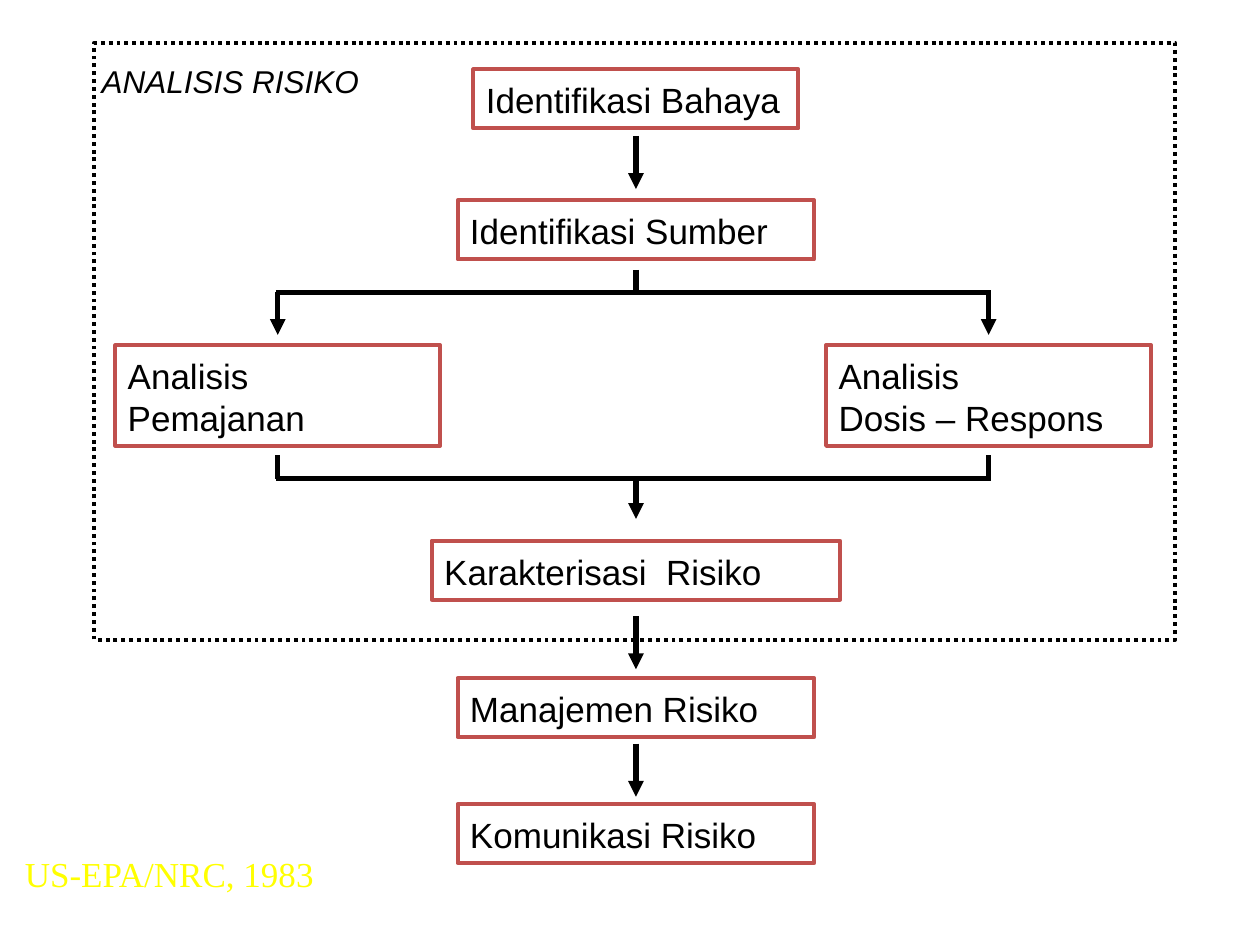
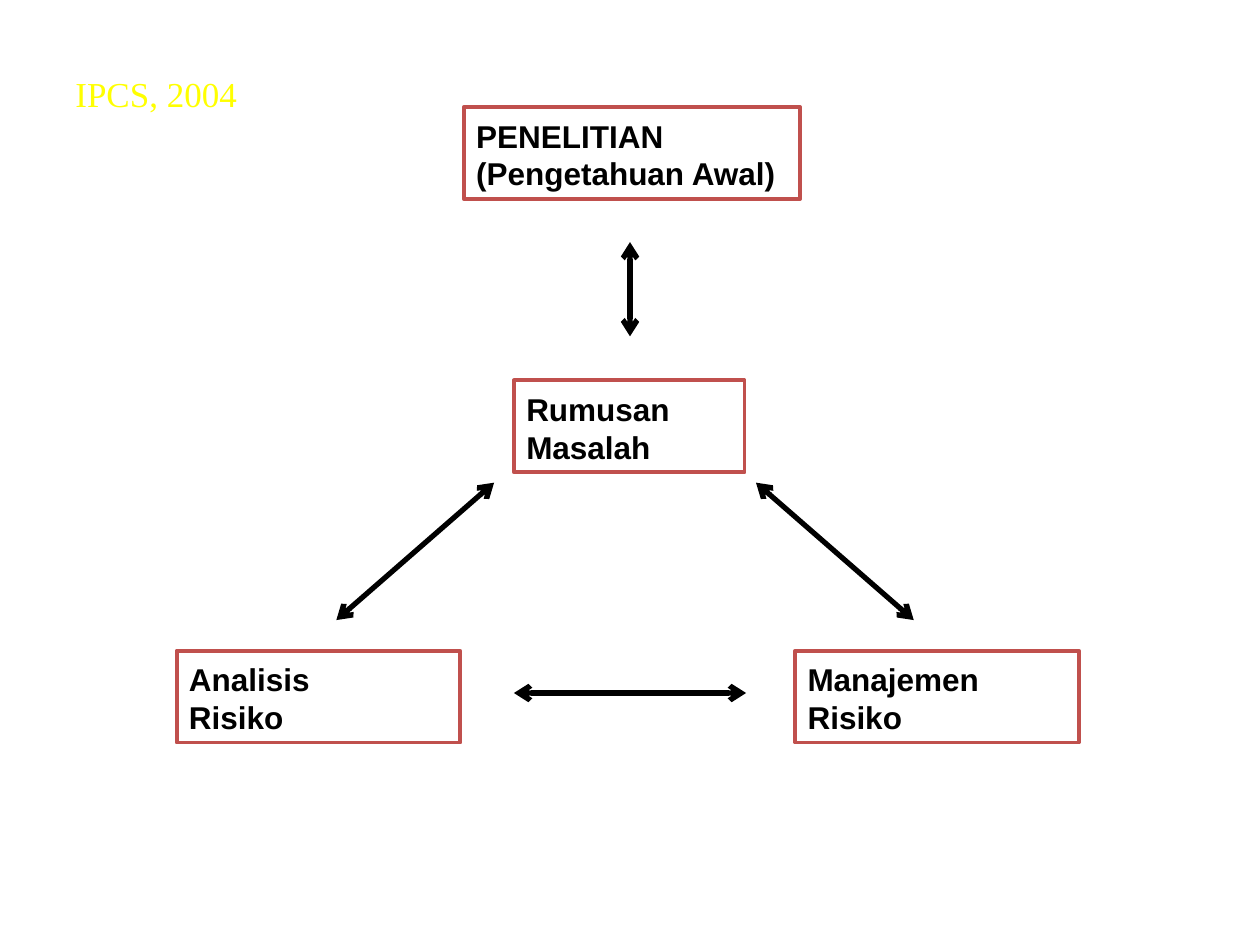
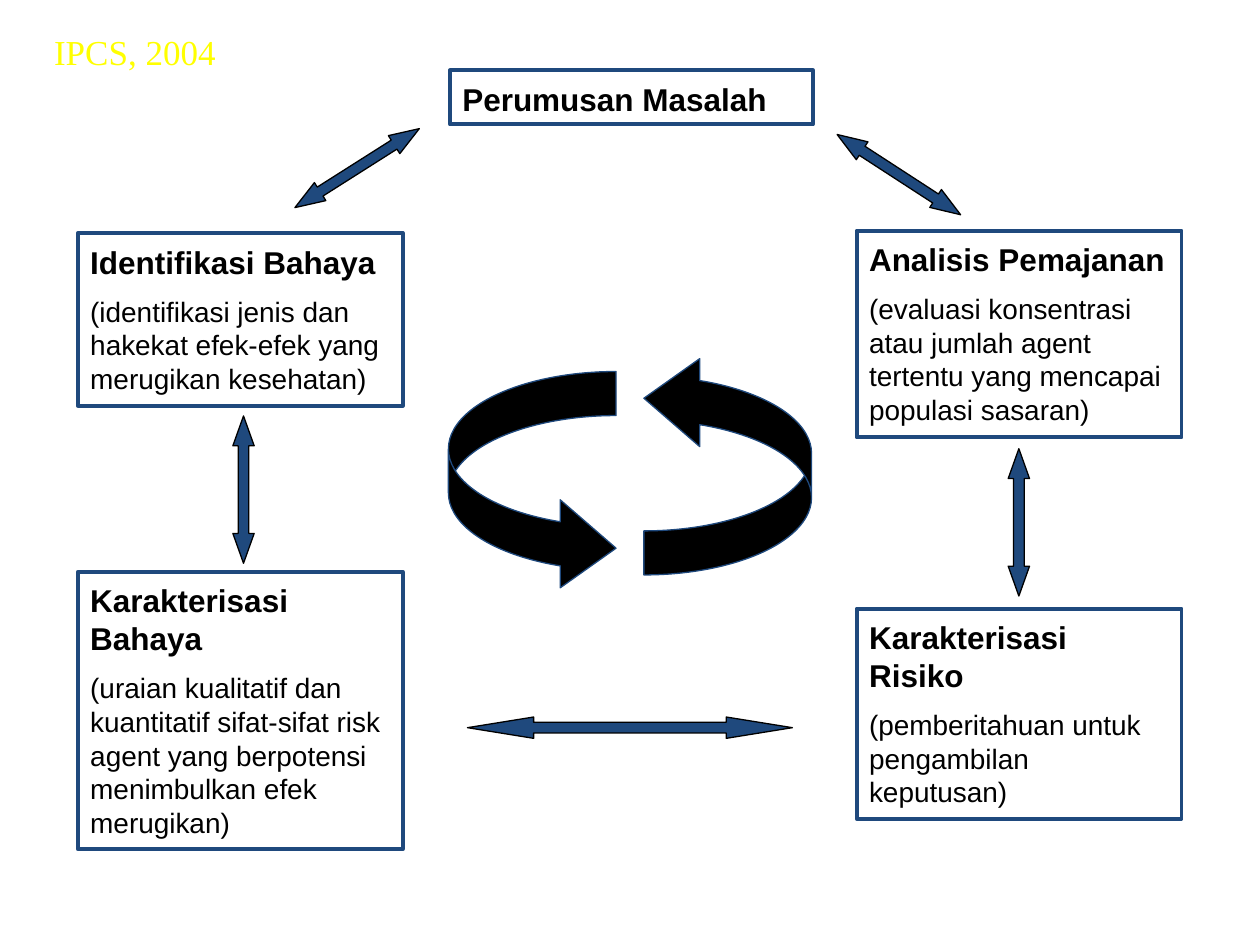
import pptx
import pptx.util
import pptx.dml.color
import pptx.enum.dml
import pptx.enum.shapes
import pptx.enum.text
import pptx.oxml.ns
from lxml import etree

Cm = pptx.util.Cm
Pt = pptx.util.Pt
SHAPES = pptx.enum.shapes.MSO_SHAPE

COLORS = {"ink": "000000", "red": "C0504D", "navy": "1F497D", "yellow": "FFFF00"}
STEP = {"name": "Arial", "size": Pt(20), "color": "ink"}
LABEL = {"name": "Arial", "size": Pt(18), "color": "ink", "italic": True}
HEADING = {"name": "Arial", "size": Pt(18), "color": "ink", "bold": True}
DETAIL = {"name": "Arial", "size": Pt(16), "color": "ink"}
SOURCE = {"name": "Times New Roman", "size": Pt(20), "color": "yellow"}

# Risk analysis flow, in cm
FRAME = (1.9, 0.86, 21.79, 12.04)
FLOW_CENTER = 12.82
STEP_HEIGHT = 1.19
FLOW_STEPS = [  # text, top, width
    ("Identifikasi Bahaya", 1.4, 6.55),
    ("Identifikasi Sumber", 4.04, 7.19),
    ("Karakterisasi  Risiko", 10.9, 8.23),
    ("Manajemen Risiko", 13.67, 7.19),
    ("Komunikasi Risiko", 16.21, 7.19),
]
BRANCH_TOP, BRANCH_WIDTH, BRANCH_HEIGHT = 6.96, 6.55, 2.03
BRANCHES = [("Analisis\vPemajanan", 5.6), ("Analisis\vDosis – Respons", 19.93)]
FLOW_ARROW_TOPS, FLOW_ARROW_LENGTH = [2.74, 12.42, 14.99], 1.07
SPLIT_Y, JOIN_Y = 5.89, 9.65
BAR_OVERHANG = 0.04

# Problem formulation triangle, in cm
TRIANGLE_HEIGHT = 1.85
TRIANGLE_BOXES = [  # text, left, top, width
    ("PENELITIAN\v(Pengetahuan Awal)", 9.35, 2.16, 6.78),
    ("Rumusan Masalah", 10.36, 7.67, 4.65),
    ("Analisis\vRisiko", 3.56, 13.12, 5.72),
    ("Manajemen Risiko", 16.03, 13.12, 5.72),
]
TRIANGLE_ARROWS = [
    (15.24, 9.73, 18.42, 12.5),
    (9.96, 9.73, 6.78, 12.5),
    (12.7, 4.88, 12.7, 6.78),
    (10.36, 13.97, 15.04, 13.97),
]

# Risk assessment cycle, in cm
CYCLE_BOXES = [  # heading, detail, place
    ("Perumusan Masalah", None, (9.07, 1.42, 7.32, 1.09)),
    ("Identifikasi Bahaya",
     "(identifikasi jenis dan hakekat efek-efek yang merugikan kesehatan)",
     (1.57, 4.7, 6.55, 3.48)),
    ("Karakterisasi Bahaya",
     "(uraian kualitatif dan kuantitatif sifat-sifat risk agent yang "
     "berpotensi menimbulkan efek merugikan)",
     (1.57, 11.53, 6.55, 5.59)),
    ("Analisis Pemajanan",
     "(evaluasi konsentrasi atau jumlah agent tertentu yang mencapai populasi sasaran)",
     (17.27, 4.65, 6.55, 4.17)),
    ("Karakterisasi Risiko",
     "(pemberitahuan untuk pengambilan keputusan)",
     (17.27, 12.27, 6.55, 4.24)),
]
CURVED_ARROWS = [((9.04, 7.49, 3.38, 4.45), 0), ((12.98, 7.14, 3.38, 4.45), 180)]
CURVE_ADJUSTMENTS = (0.263, 0.525, 0.333)
BLOCK_ARROW_HEIGHT = 0.43
BLOCK_ARROWS = [  # centre x, centre y, length, rotation, head length
    (7.2, 3.39, 2.97, 327.6, 1.4),
    (4.91, 9.87, 2.97, 270, 1.4),
    (12.7, 14.67, 6.55, 0, 3.1),
    (20.54, 10.53, 2.97, 270, 1.4),
    (18.12, 3.52, 2.97, 213, 1.4),
]


def rgb(name):
    return pptx.dml.color.RGBColor.from_string(COLORS[name])


def centered(center, top, width, height):
    return center - width / 2, top, width, height


def write(shape, paragraphs):
    """Fill a shape with (text, font format) pairs, one per paragraph."""
    frame = shape.text_frame
    settings = {
        "word_wrap": True, "vertical_anchor": pptx.enum.text.MSO_ANCHOR.TOP,
        "margin_left": Cm(0.25), "margin_right": Cm(0.25),
        "margin_top": Cm(0.19), "margin_bottom": Cm(0.1),
    }
    for name, value in settings.items():
        setattr(frame, name, value)
    for index, (text, font_format) in enumerate(paragraphs):
        paragraph = frame.add_paragraph() if index else frame.paragraphs[0]
        paragraph.text = text
        paragraph.alignment = pptx.enum.text.PP_ALIGN.LEFT
        if index:
            paragraph.space_before = Pt(8)
        for run in paragraph.runs:
            for name, value in font_format.items():
                if name == "color":
                    run.font.color.rgb = rgb(value)
                else:
                    setattr(run.font, name, value)


def add_text(slide, place, text, font_format):
    write(slide.shapes.add_textbox(*map(Cm, place)), [(text, font_format)])


def add_shape(slide, kind, place, line, width, fill=None, adjustments=(), rotation=0):
    shape = slide.shapes.add_shape(kind, *map(Cm, place))
    shape.shadow.inherit = False
    shape.rotation = rotation
    for index, value in enumerate(adjustments):
        shape.adjustments[index] = value
    if fill:
        shape.fill.solid()
        shape.fill.fore_color.rgb = rgb(fill)
    else:
        shape.fill.background()
    shape.line.color.rgb = rgb(line)
    shape.line.width = Pt(width)
    return shape


def add_box(slide, place, line, paragraphs):
    write(add_shape(slide, SHAPES.RECTANGLE, place, line, 2.25), paragraphs)


def add_line(slide, ends, head=None, tail=None):
    connector = slide.shapes.add_connector(
        pptx.enum.shapes.MSO_CONNECTOR.STRAIGHT, *map(Cm, ends))
    connector.line.color.rgb = rgb("ink")
    connector.line.width = Pt(3)
    outline = connector.line._get_or_add_ln()
    for tag, kind in (("a:headEnd", head), ("a:tailEnd", tail)):
        if kind:
            etree.SubElement(outline, pptx.oxml.ns.qn(tag), type=kind)
    etree.SubElement(connector._element.spPr, pptx.oxml.ns.qn("a:effectLst"))


def build_flow(slide):
    frame = add_shape(slide, SHAPES.RECTANGLE, FRAME, "ink", 2.25)
    frame.line.dash_style = pptx.enum.dml.MSO_LINE.ROUND_DOT
    for text, top, width in FLOW_STEPS:
        place = centered(FLOW_CENTER, top, width, STEP_HEIGHT)
        add_box(slide, place, "red", [(text, STEP)])
    for text, center in BRANCHES:
        place = centered(center, BRANCH_TOP, BRANCH_WIDTH, BRANCH_HEIGHT)
        add_box(slide, place, "red", [(text, STEP)])
        add_line(slide, (center, SPLIT_Y, center, 6.75), tail="triangle")
        add_line(slide, (center, 9.18, center, JOIN_Y))
    bar_left, bar_right = BRANCHES[0][1] - BAR_OVERHANG, BRANCHES[1][1] + BAR_OVERHANG
    for y in (SPLIT_Y, JOIN_Y):
        add_line(slide, (bar_left, y, bar_right, y))
    add_line(slide, (FLOW_CENTER, 5.44, FLOW_CENTER, SPLIT_Y))
    add_line(slide, (FLOW_CENTER, JOIN_Y, FLOW_CENTER, 10.46), tail="triangle")
    for top in FLOW_ARROW_TOPS:
        add_line(slide, (FLOW_CENTER, top, FLOW_CENTER, top + FLOW_ARROW_LENGTH),
                 tail="triangle")
    add_text(slide, (1.8, 1.07, 5.97, 1.02), "ANALISIS RISIKO", LABEL)
    add_text(slide, (0.25, 16.99, 6.78, 1.09), "US-EPA/NRC, 1983", SOURCE)


def build_triangle(slide):
    for text, left, top, width in TRIANGLE_BOXES:
        add_box(slide, (left, top, width, TRIANGLE_HEIGHT), "red", [(text, HEADING)])
    for ends in TRIANGLE_ARROWS:
        add_line(slide, ends, head="arrow", tail="arrow")
    add_text(slide, (1.27, 1.27, 4, 1.09), "IPCS, 2004", SOURCE)


def build_cycle(slide):
    for heading, detail, place in CYCLE_BOXES:
        paragraphs = [(heading, HEADING)]
        if detail:
            paragraphs.append((detail, DETAIL))
        add_box(slide, place, "navy", paragraphs)
    for place, rotation in CURVED_ARROWS:
        add_shape(slide, SHAPES.CURVED_RIGHT_ARROW, place, "navy", 0.75, "ink",
                  CURVE_ADJUSTMENTS, rotation)
    for x, y, length, rotation, head_length in BLOCK_ARROWS:
        place = centered(x, y - BLOCK_ARROW_HEIGHT / 2, length, BLOCK_ARROW_HEIGHT)
        add_shape(slide, SHAPES.LEFT_RIGHT_ARROW, place, "ink", 0.75, "navy",
                  (0.5, head_length), rotation)
    add_text(slide, (0.84, 0.43, 4, 1.09), "IPCS, 2004", SOURCE)


def main():
    presentation = pptx.Presentation()
    presentation.slide_width = Cm(25.4)
    presentation.slide_height = Cm(19.05)
    for build in (build_flow, build_triangle, build_cycle):
        build(presentation.slides.add_slide(presentation.slide_layouts[6]))
    presentation.save("out.pptx")


if __name__ == "__main__":
    main()
